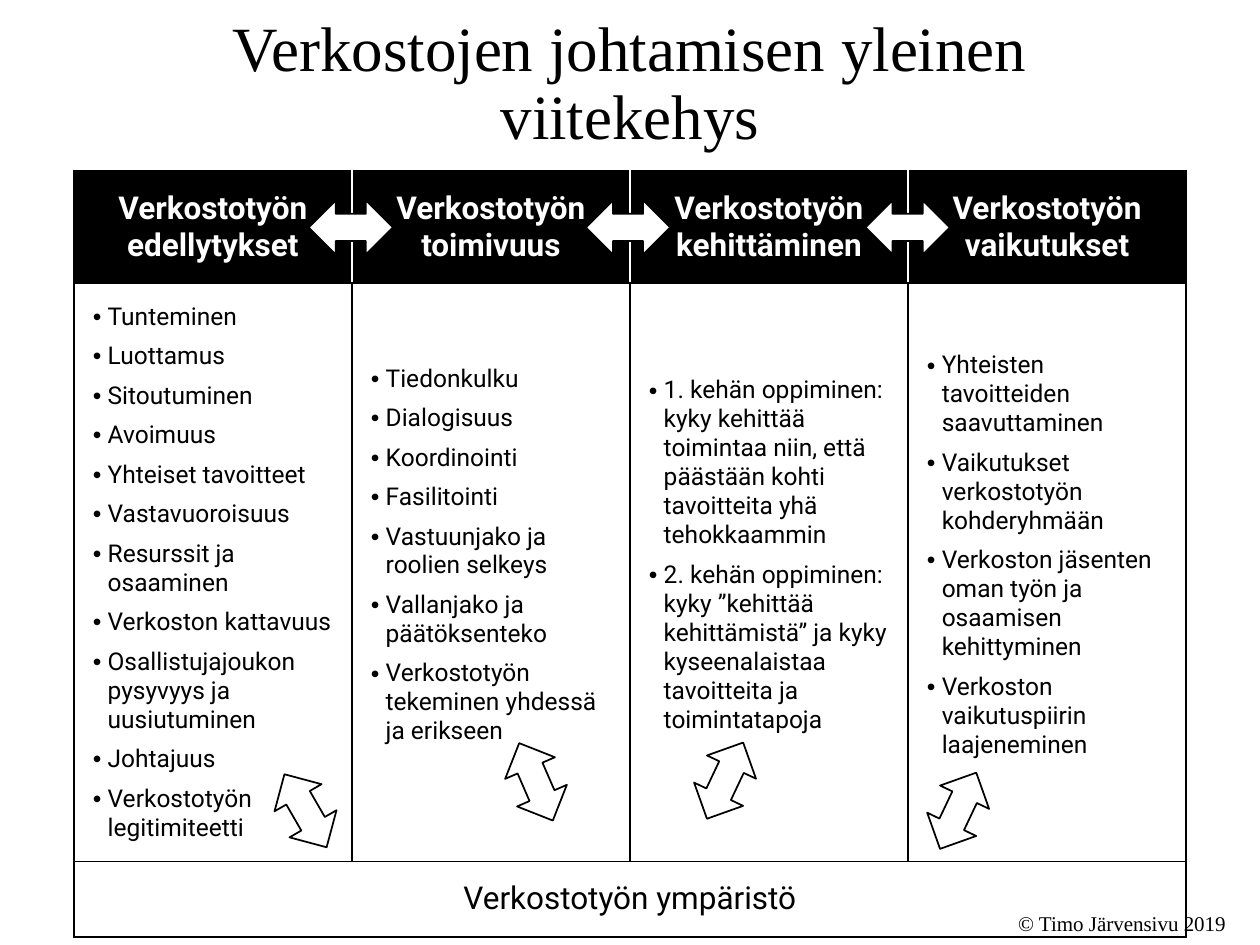
import pptx
import pptx.util
import pptx.dml.color
import pptx.enum.shapes
import pptx.enum.text
import pptx.oxml
import pptx.oxml.ns

Pt = pptx.util.Pt
RGB = pptx.dml.color.RGBColor.from_string
ALIGN = pptx.enum.text.PP_ALIGN
ANCHOR = pptx.enum.text.MSO_ANCHOR
COLORS = {"black": "000000", "white": "FFFFFF"}


def write_text(frame, lines, font="Roboto", size=14, color="black", bold=False,
               align=ALIGN.LEFT, line_spacing=None, bullet=False):
    frame.word_wrap = True
    for index, line in enumerate(lines):
        paragraph = frame.paragraphs[0] if index == 0 else frame.add_paragraph()
        paragraph.alignment = align
        if line_spacing:
            paragraph.line_spacing = line_spacing
        if bullet:
            paragraph.space_before = paragraph.space_after = Pt(3)
            properties = paragraph._p.get_or_add_pPr()
            properties.set("marL", str(Pt(8.5)))
            properties.set("indent", str(-Pt(8.5)))
            for tag, key, value in (("buFont", "typeface", "Arial"), ("buChar", "char", "•")):
                mark = pptx.oxml.parse_xml(f'<a:{tag} {pptx.oxml.ns.nsdecls("a")} {key}="{value}"/>')
                properties.append(mark)
        run = paragraph.add_run()
        run.text = line
        run.font.name = font
        run.font.size = Pt(size)
        run.font.bold = bold
        run.font.color.rgb = RGB(COLORS[color])


def format_cell(cell, fill, left="black", right="black", top_margin=10.2, bottom_margin=10.2):
    cell.fill.solid()
    cell.fill.fore_color.rgb = RGB(COLORS[fill])
    cell.vertical_anchor = ANCHOR.MIDDLE
    cell.margin_left = cell.margin_right = Pt(10.8)
    cell.margin_top = Pt(top_margin)
    cell.margin_bottom = Pt(bottom_margin)
    sides = {"lnL": left, "lnR": right, "lnT": "black", "lnB": "black"}
    for index, (side, color) in enumerate(sides.items()):
        border = pptx.oxml.parse_xml(
            f'<a:{side} {pptx.oxml.ns.nsdecls("a")} w="{Pt(1)}"><a:solidFill>'
            f'<a:srgbClr val="{COLORS[color]}"/></a:solidFill></a:{side}>')
        cell._tc.get_or_add_tcPr().insert(index, border)


presentation = pptx.Presentation()
presentation.slide_width = Pt(720)
presentation.slide_height = Pt(540)
slide = presentation.slides.add_slide(presentation.slide_layouts[6])

title = slide.shapes.add_textbox(Pt(49.7), Pt(14.4), Pt(620.6), Pt(68.4))
title.text_frame.vertical_anchor = ANCHOR.MIDDLE
write_text(title.text_frame, ["Verkostojen johtamisen yleinen viitekehys"],
           font="Times New Roman", size=36, align=ALIGN.CENTER, line_spacing=0.9)

themes = {
    "Verkostotyön edellytykset": [
        "Tunteminen", "Luottamus", "Sitoutuminen", "Avoimuus", "Yhteiset tavoitteet",
        "Vastavuoroisuus", "Resurssit ja osaaminen", "Verkoston kattavuus",
        "Osallistujajoukon pysyvyys ja uusiutuminen", "Johtajuus",
        "Verkostotyön legitimiteetti"],
    "Verkostotyön toimivuus": [
        "Tiedonkulku", "Dialogisuus", "Koordinointi", "Fasilitointi",
        "Vastuunjako ja roolien selkeys", "Vallanjako ja päätöksenteko",
        "Verkostotyön tekeminen yhdessä ja erikseen"],
    "Verkostotyön kehittäminen": [
        "1. kehän oppiminen: kyky kehittää toimintaa niin, että päästään kohti "
        "tavoitteita yhä tehokkaammin",
        "2. kehän oppiminen: kyky ”kehittää kehittämistä” ja kyky kyseenalaistaa "
        "tavoitteita ja toimintatapoja"],
    "Verkostotyön vaikutukset": [
        "Yhteisten tavoitteiden saavuttaminen",
        "Vaikutukset verkostotyön kohderyhmään",
        "Verkoston jäsenten oman työn ja osaamisen kehittyminen",
        "Verkoston vaikutuspiirin laajeneminen"],
}

row_heights = [64, 329.7, 43]
framework = slide.shapes.add_table(
    3, 4, Pt(42.2), Pt(97.7), Pt(635.6), Pt(sum(row_heights))).table
framework.horz_banding = False
for row, height in zip(framework.rows, row_heights):
    row.height = Pt(height)
for column, (heading, points) in enumerate(themes.items()):
    framework.columns[column].width = Pt(158.9)
    header, body, footer = (framework.cell(row, column) for row in range(3))
    format_cell(header, "black", left="white" if column > 0 else "black",
                right="white" if column < 3 else "black")
    write_text(header.text_frame, [heading], size=18, color="white", bold=True,
               align=ALIGN.CENTER)
    format_cell(body, "white", top_margin=9.2, bottom_margin=28.8 if column > 0 else 9.2)
    write_text(body.text_frame, points, bullet=True)
    format_cell(footer, "white")
environment = framework.cell(2, 0)
environment.merge(framework.cell(2, 3))
write_text(environment.text_frame, ["Verkostotyön ympäristö"], size=18, align=ALIGN.CENTER)

interactions = [
    (176.4, 114.5, 0), (334.8, 114.5, 0), (494.6, 114.5, 0),
    (150.5, 447.8, 60), (523.4, 447.8, 115.4), (390.2, 430.6, 115.4), (282.2, 431.3, 66.5)]
for left, top, angle in interactions:
    arrow = slide.shapes.add_shape(
        pptx.enum.shapes.MSO_SHAPE.LEFT_RIGHT_ARROW, Pt(left), Pt(top), Pt(48.2), Pt(31))
    arrow.rotation = angle
    arrow.shadow.inherit = False
    arrow.fill.solid()
    arrow.fill.fore_color.rgb = RGB(COLORS["white"])
    arrow.line.color.rgb = RGB(COLORS["black"])
    arrow.line.width = Pt(1)

copyright_line = slide.shapes.add_textbox(Pt(425.5), Pt(517), Pt(282.2), Pt(21.6))
copyright_line.text_frame.auto_size = pptx.enum.text.MSO_AUTO_SIZE.SHAPE_TO_FIT_TEXT
write_text(copyright_line.text_frame, ["© Timo Järvensivu 2019"],
           font="Times New Roman", size=12, align=ALIGN.RIGHT)

presentation.save("out.pptx")
